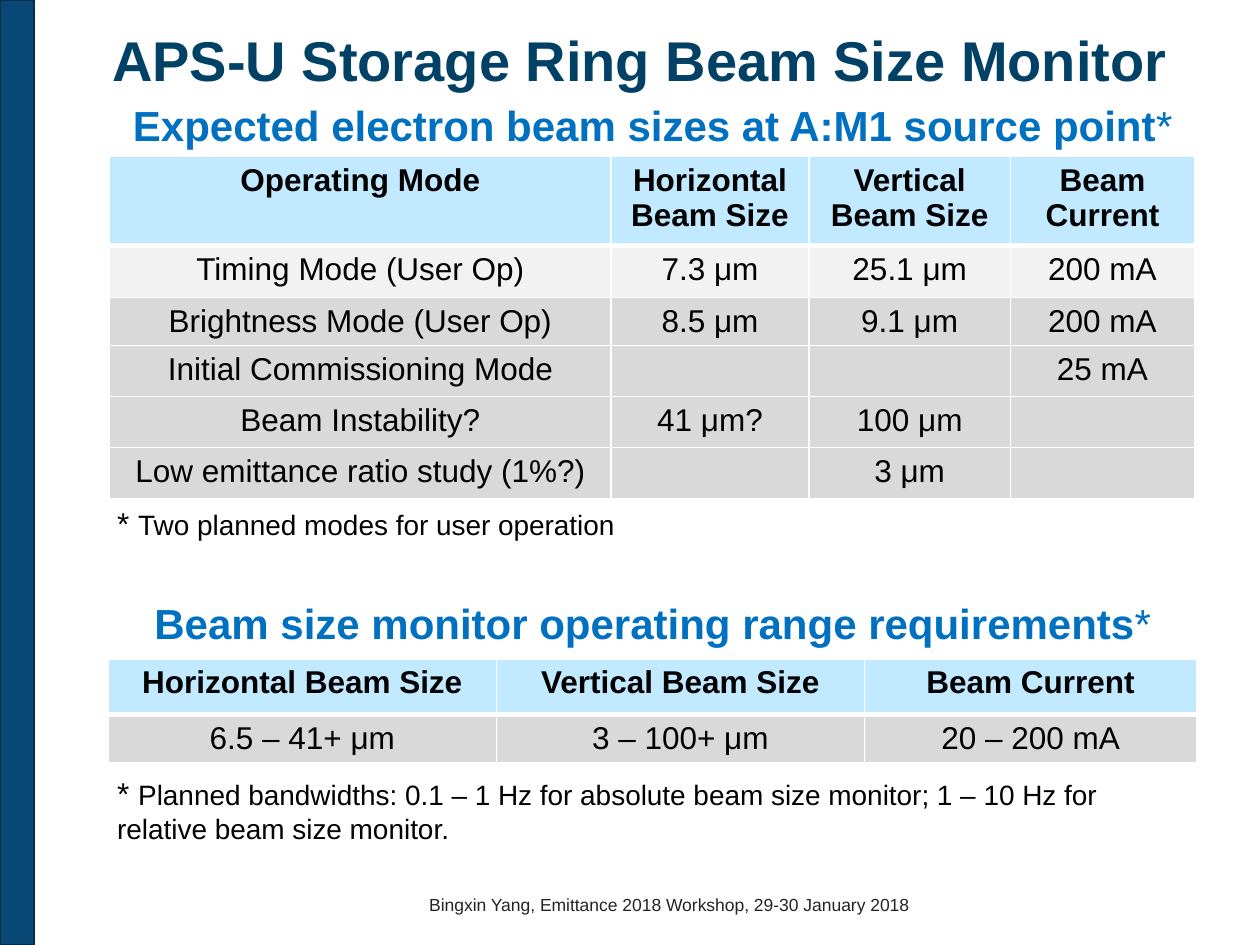
from lxml import etree
from pptx import Presentation
from pptx.dml.color import RGBColor
from pptx.enum import shapes, text
from pptx.oxml.ns import qn
from pptx.util import Inches, Pt

# Content
COLORS = {"bar": "094875", "bar_line": "00304E", "title": "004165", "heading": "0070C0",
          "header": "C1E9FF", "light": "F2F2F2", "gray": "D9D9D9",
          "black": "000000", "footer": "232425", "white": "FFFFFF"}
FONT = "Arial"
TITLE = "APS-U Storage Ring Beam Size Monitor"
SIZES_HEADING = "Expected electron beam sizes at A:M1 source point"
RANGE_HEADING = "Beam size monitor operating range requirements"
FOOTER = "Bingxin Yang, Emittance 2018 Workshop, 29-30 January 2018"
FOOTNOTES = [
    (4.0, 0.4, "Two planned modes for user operation"),
    (6.14, 0.75, "Planned bandwidths: 0.1 – 1 Hz for absolute beam size monitor; "
                 "1 – 10 Hz for relative beam size monitor."),
]
TABLES = [
    {"at": (0.87, 1.24), "columns": [3.98, 1.57, 1.6, 1.46],
     "heights": [0.71, 0.41] + [0.38] * 4,
     "fills": ["header", "light"] + ["gray"] * 4,
     "rows": [
         ["Operating Mode", "Horizontal\nBeam Size", "Vertical\nBeam Size", "Beam Current"],
         ["Timing Mode (User Op)", "7.3 μm", "25.1 μm", "200 mA"],
         ["Brightness Mode (User Op)", "8.5 μm", "9.1 μm", "200 mA"],
         ["Initial Commissioning Mode", "", "", "25 mA"],
         ["Beam Instability?", "41 μm?", "100 μm", ""],
         ["Low emittance ratio study (1%?)", "", "3 μm", ""]]},
    {"at": (0.86, 5.23), "columns": [3.08, 2.92, 2.64],
     "heights": [0.44, 0.38], "fills": ["header", "gray"],
     "rows": [
         ["Horizontal Beam Size", "Vertical Beam Size", "Beam Current"],
         ["6.5 – 41+ μm", "3 – 100+ μm", "20 – 200 mA"]]},
]
CENTER, LEFT = text.PP_ALIGN.CENTER, text.PP_ALIGN.LEFT


def rgb(name):
    return RGBColor.from_string(COLORS[name])


def add_run(paragraph, words, size, color, bold=False):
    run = paragraph.add_run()
    run.text = words
    run.font.name, run.font.size, run.font.bold = FONT, Pt(size), bold
    run.font.color.rgb = rgb(color)


def place(shape, left, top, width, height):
    shape.left, shape.top = Inches(left), Inches(top)
    shape.width, shape.height = Inches(width), Inches(height)


def fill_text(shape, runs, align, anchor=text.MSO_ANCHOR.TOP, bottom=0.05, after=6):
    frame = shape.text_frame
    frame.word_wrap, frame.auto_size = True, text.MSO_AUTO_SIZE.NONE
    frame.vertical_anchor = anchor
    frame.margin_left = frame.margin_right = frame.margin_top = 0
    frame.margin_bottom = Inches(bottom)
    paragraph = frame.paragraphs[0]
    paragraph.alignment = align
    paragraph.space_before, paragraph.space_after = Pt(0), Pt(after)
    for run in runs:
        add_run(paragraph, *run)
    return paragraph


def heading_runs(words):
    return [(words, 24, "heading", True), ("*", 24, "heading")]


def set_borders(cell, bottom_width):
    properties = cell._tc.get_or_add_tcPr()
    for position, side in enumerate("LRTB"):
        width = bottom_width if side == "B" else 1
        line = etree.Element(qn(f"a:ln{side}"), w=str(Pt(width)))
        solid = etree.SubElement(line, qn("a:solidFill"))
        etree.SubElement(solid, qn("a:srgbClr"), val=COLORS["white"])
        properties.insert(position, line)


def add_table(slide, data):
    left, top = data["at"]
    columns, heights = data["columns"], data["heights"]
    table = slide.shapes.add_table(
        len(heights), len(columns), Inches(left), Inches(top),
        Inches(sum(columns)), Inches(sum(heights))).table
    for column, width in zip(table.columns, columns):
        column.width = Inches(width)
    for row_index, (row, height) in enumerate(zip(data["rows"], heights)):
        table.rows[row_index].height = Inches(height)
        is_header = row_index == 0
        for column_index, words in enumerate(row):
            cell = table.cell(row_index, column_index)
            cell.fill.solid()
            cell.fill.fore_color.rgb = rgb(data["fills"][row_index])
            set_borders(cell, 3 if is_header else 1)
            for number, line in enumerate(words.split("\n")):
                frame = cell.text_frame
                paragraph = frame.add_paragraph() if number else frame.paragraphs[0]
                paragraph.alignment = CENTER
                if line:
                    add_run(paragraph, line, 18, "black", is_header)


def add_text(slide, box, *args, **options):
    shape = slide.shapes.add_textbox(*(Inches(value) for value in box))
    fill_text(shape, *args, **options)


presentation = Presentation()
presentation.slide_width, presentation.slide_height = Inches(10), Inches(7.5)
slide = presentation.slides.add_slide(presentation.slide_layouts[1])

# Side bar
bar = slide.shapes.add_shape(shapes.MSO_SHAPE.RECTANGLE, 0, 0, Inches(0.27), Inches(7.5))
bar.shadow.inherit = False
bar.fill.solid()
bar.fill.fore_color.rgb = rgb("bar")
bar.line.color.rgb, bar.line.width = rgb("bar_line"), Pt(0.75)

# Title and first heading
title, body = slide.shapes.title, slide.placeholders[1]
place(title, 0.5, 0.2, 9.16, 0.77)
fill_text(title, [(TITLE, 32, "title", True)], CENTER, bottom=0, after=0)
place(body, 0.6, 0.79, 9.16, 0.5)
heading = fill_text(body, heading_runs(SIZES_HEADING), CENTER)
properties = heading._p.get_or_add_pPr()
properties.set("marL", "0")
properties.set("indent", "0")
etree.SubElement(properties, qn("a:buNone"))

# Tables, second heading, footnotes and footer
for data in TABLES:
    add_table(slide, data)
add_text(slide, (0.6, 4.74, 9.16, 0.49), heading_runs(RANGE_HEADING), CENTER)
for top, height, note in FOOTNOTES:
    add_text(slide, (0.93, top, 8.49, height),
             [("* ", 18, "black"), (note, 16, "black")], LEFT)
add_text(slide, (1.58, 7.06, 7.46, 0.24), [(FOOTER, 10, "footer")], CENTER,
         anchor=text.MSO_ANCHOR.MIDDLE, bottom=0, after=0)

presentation.save("out.pptx")
